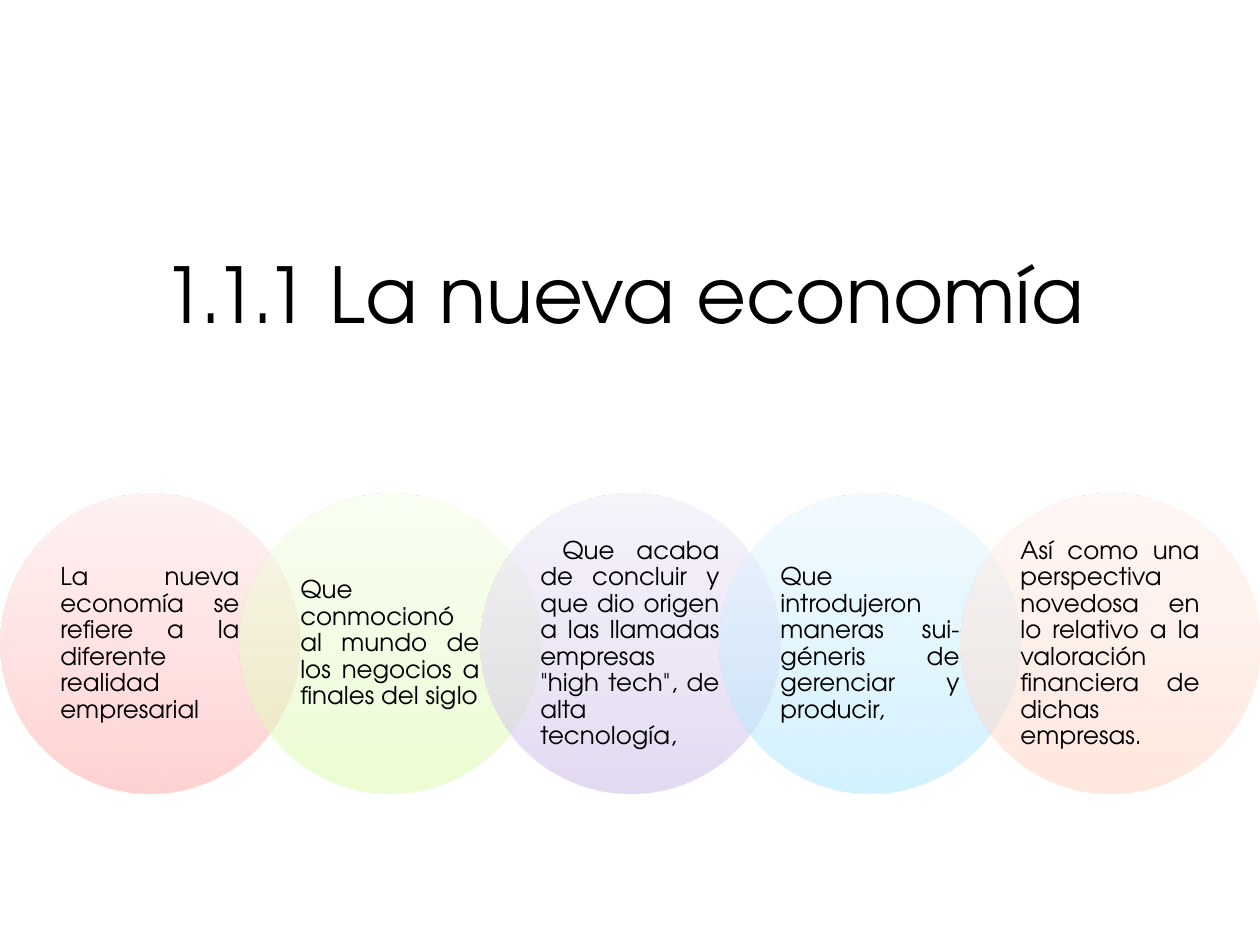
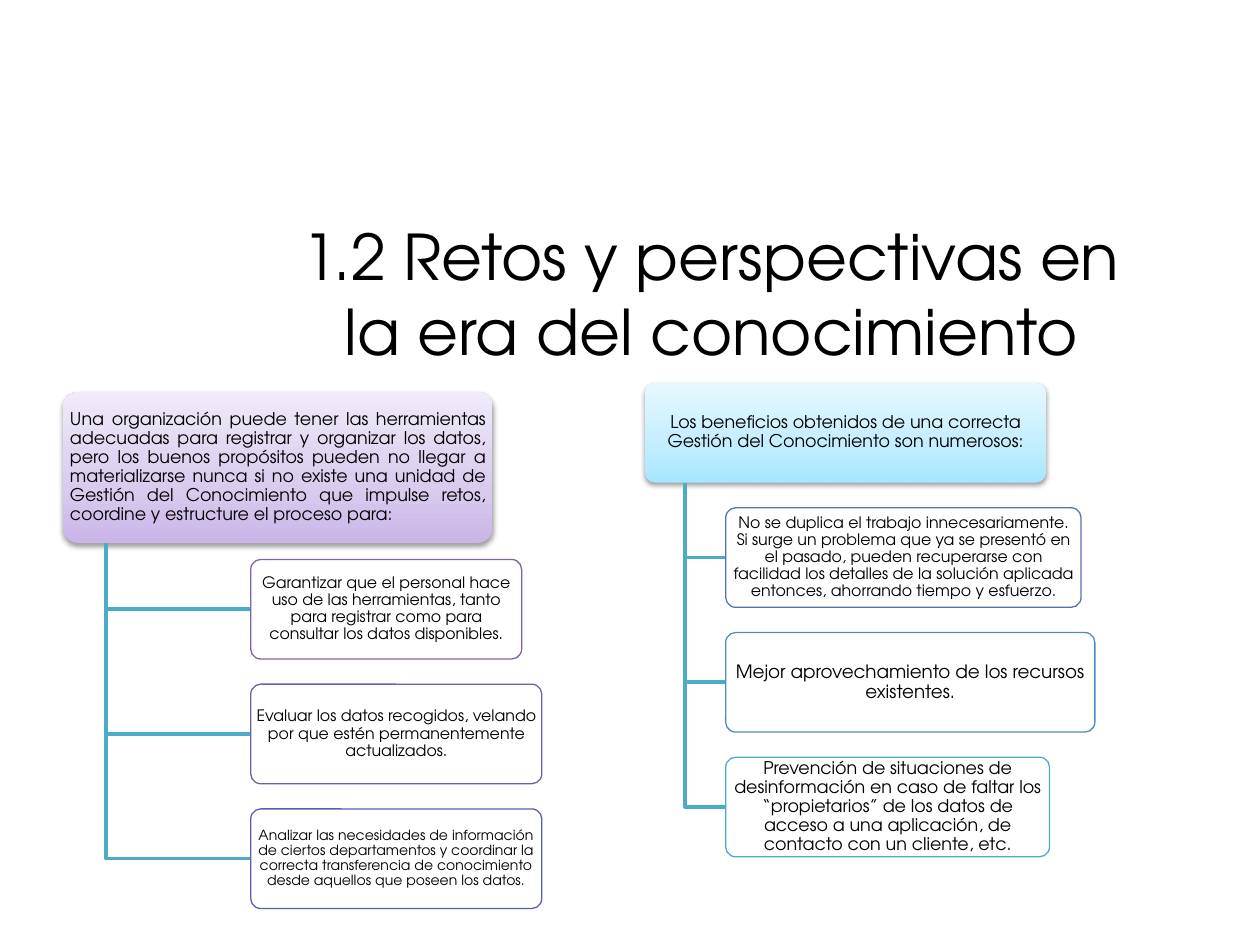
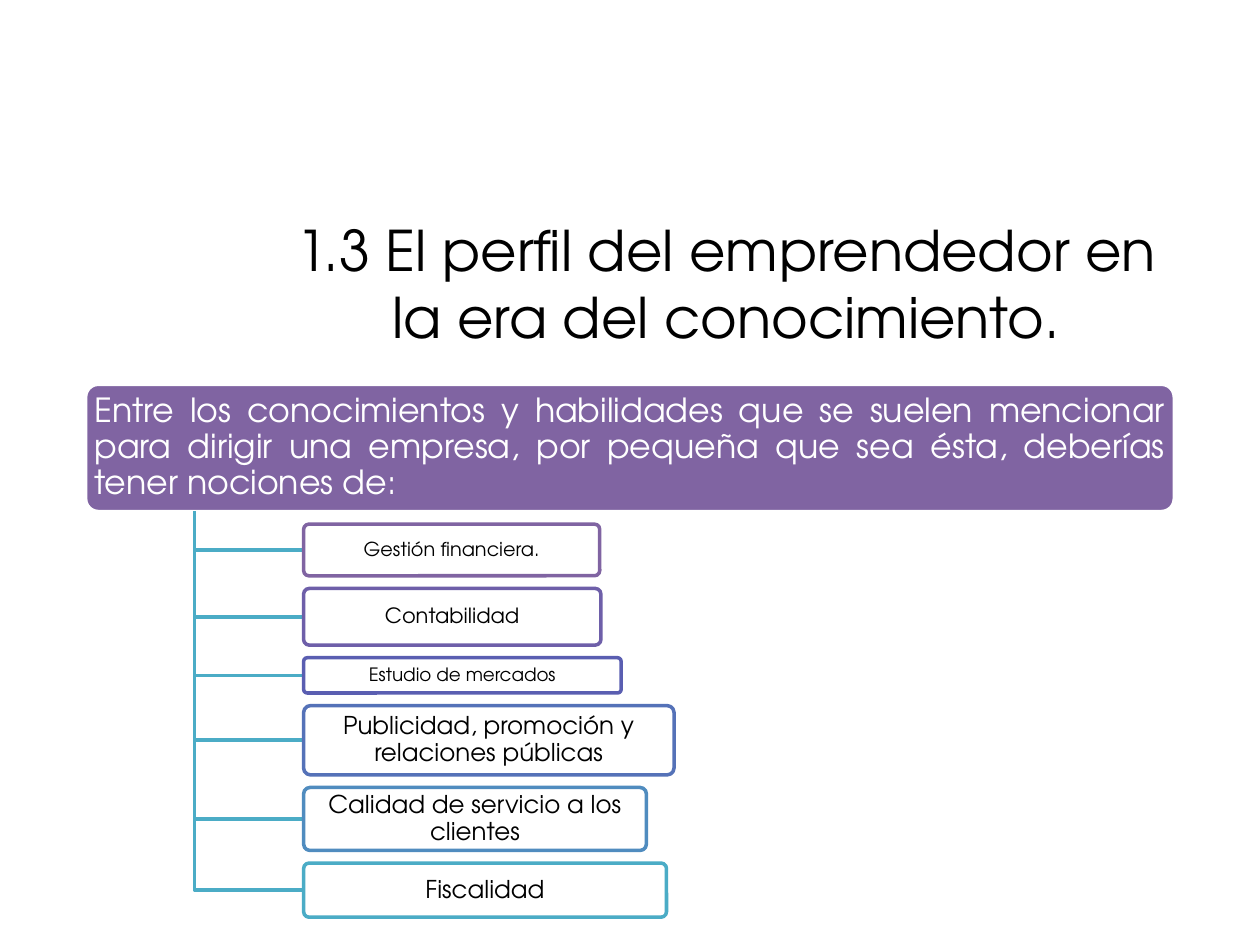
from dataclasses import dataclass

from lxml import etree
from pptx import Presentation
from pptx.dml.color import RGBColor
from pptx.enum.shapes import MSO_SHAPE
from pptx.enum.text import MSO_ANCHOR, MSO_AUTO_SIZE, PP_ALIGN
from pptx.oxml.ns import qn
from pptx.util import Inches, Pt

CENTER, JUSTIFY = PP_ALIGN.CENTER, PP_ALIGN.JUSTIFY
MIDDLE, NO_FIT = MSO_ANCHOR.MIDDLE, MSO_AUTO_SIZE.NONE
OVAL, ROUNDED = MSO_SHAPE.OVAL, MSO_SHAPE.ROUNDED_RECTANGLE


@dataclass(frozen=True)
class Theme:
    font: str = "TeX Gyre Adventor"
    ink: str = "000000"
    paper: str = "FFFFFF"
    branch: str = "4BACC6"
    red: tuple = ("FFA6A5", "FFC0BF", "FFE7E7")
    green: tuple = ("DAFDA7", "E4FCC2", "F5FFE7")
    violet: tuple = ("C9B5E8", "D8CBEE", "F0EAF9")
    blue: tuple = ("A7E6FF", "C1EDFF", "E7F8FF")
    orange: tuple = ("FFD2BD", "FFDED0", "FFF2ED")
    ramp: tuple = ("8064A2", "6E5FA9", "5A5EB1", "5572B8", "508CBF", "4BACC6")
    stops: tuple = (0, 35, 100)
    circle_size: float = 14
    branch_weight: float = 2


THEME = Theme()
WIDTH, HEIGHT = 10, 7.5
TITLE_HEIGHT = 1.25
DIAMETER, CIRCLE_TOP = 2.38, 3.92

ECONOMY = {
    "title": ("1.1.1 La nueva economía", 44, (0.45, 1.7, 9)),
    "circles": [
        ("La nueva economía se refiere a la diferente realidad empresarial", THEME.red),
        ("Que conmocionó al mundo de los negocios a finales del siglo", THEME.green),
        (" Que acaba de concluir y que dio origen a las llamadas empresas "
         "\"high tech\", de alta tecnología,", THEME.violet),
        ("Que introdujeron maneras sui-géneris de gerenciar y producir,", THEME.blue),
        ("Así como una perspectiva novedosa en lo relativo a la valoración "
         "financiera de dichas empresas.", THEME.orange),
    ],
}

CHALLENGES = {
    "title": ("1.2 Retos y perspectivas en la era del conocimiento", 36, (2.09, 1.7, 7.11)),
    "trees": [
        {
            "root": "Una organización puede tener las herramientas adecuadas para registrar "
                    "y organizar los datos, pero los buenos propósitos pueden no llegar a "
                    "materializarse nunca si no existe una unidad de Gestión del Conocimiento "
                    "que impulse retos, coordine y estructure el proceso para:",
            "place": (0.5, 3.11, 3.41, 1.2), "fill": THEME.violet, "size": 10,
            "align": JUSTIFY, "indent": 1.49, "first_gap": 0.13, "gap": 0.2,
            "weight": 0.75, "colours": THEME.ramp[:3],
            "leaves": [
                ("Garantizar que el personal hace uso de las herramientas, tanto para "
                 "registrar como para consultar los datos disponibles.", 9, 2.15, 0.79),
                ("Evaluar los datos recogidos, velando por que estén permanentemente "
                 "actualizados.", 9, 2.31, 0.79),
                ("Analizar las necesidades de información de ciertos departamentos y "
                 "coordinar la correcta transferencia de conocimiento desde aquellos que "
                 "poseen los datos.", 8, 2.31, 0.79),
            ],
        },
        {
            "root": "Los beneficios obtenidos de una correcta Gestión del Conocimiento "
                    "son numerosos:",
            "place": (5.12, 3.04, 3.18, 0.79), "fill": THEME.blue, "size": 10,
            "align": CENTER, "indent": 0.64, "first_gap": 0.2, "gap": 0.2,
            "weight": 0.75, "colours": THEME.ramp[3:],
            "leaves": [
                ("No se duplica el trabajo innecesariamente. Si surge un problema que ya se "
                 "presentó en el pasado, pueden recuperarse con facilidad los detalles de la "
                 "solución aplicada entonces, ahorrando tiempo y esfuerzo.", 9, 2.82, 0.79),
                ("Mejor aprovechamiento de los recursos existentes.", 10.5, 2.93, 0.79),
                ("Prevención de situaciones de desinformación en caso de faltar los "
                 "“propietarios” de los datos de acceso a una aplicación, de contacto con un "
                 "cliente, etc.", 10, 2.57, 0.79),
            ],
        },
    ],
}

PROFILE = {
    "title": ("1.3 El perfil del emprendedor en la era del conocimiento.", 32, (2.17, 1.62, 7.19)),
    "trees": [
        {
            "root": "Entre los conocimientos y habilidades que se suelen mencionar para dirigir "
                    "una empresa, por pequeña que sea ésta, deberías tener nociones de:",
            "place": (0.68, 3.05, 8.64, 1.01), "fill": THEME.ramp[0], "size": 19,
            "align": JUSTIFY, "indent": 1.73, "first_gap": 0.1, "gap": 0.1,
            "weight": 2, "colours": THEME.ramp,
            "leaves": [
                ("Gestión financiera.", 11, 2.35, 0.41),
                ("Contabilidad", 12, 2.36, 0.45),
                ("Estudio de mercados", 10.5, 2.52, 0.28),
                ("Publicidad, promoción y relaciones públicas", 14, 2.94, 0.55),
                ("Calidad de servicio a los clientes", 14, 2.72, 0.5),
                ("Fiscalidad", 14, 2.88, 0.43),
            ],
        },
    ],
}


def rgb(colour):
    return RGBColor.from_string(colour)


def add_node(parent, tag, **attributes):
    return etree.SubElement(parent, qn(tag), {k: str(v) for k, v in attributes.items()})


def write(shape, text, size, align=CENTER, colour=THEME.ink, inset=None, spacing=None):
    frame = shape.text_frame
    frame.word_wrap = True
    frame.auto_size = NO_FIT
    frame.vertical_anchor = MIDDLE
    if inset:
        frame.margin_left = frame.margin_right = Inches(inset[0])
        frame.margin_top = frame.margin_bottom = Inches(inset[1])
    paragraph = frame.paragraphs[0]
    paragraph.alignment = align
    paragraph.line_spacing = spacing
    run = paragraph.add_run()
    run.text = text
    run.font.name = THEME.font
    run.font.size = Pt(size)
    run.font.color.rgb = rgb(colour)


def paint(shape, fill, opacity=100):
    properties = shape.element.spPr
    if isinstance(fill, str):
        shape.fill.solid()
        shape.fill.fore_color.rgb = rgb(fill)
        colours = [properties.find(qn("a:solidFill")).find(qn("a:srgbClr"))]
    else:
        shape.fill.gradient()
        shape.fill.gradient_angle = 90
        stops = properties.find(qn("a:gradFill")).find(qn("a:gsLst"))
        for stop in list(stops):
            stops.remove(stop)
        colours = [
            add_node(add_node(stops, "a:gs", pos=share * 1000), "a:srgbClr", val=colour)
            for share, colour in zip(THEME.stops, fill)
        ]
    if opacity < 100:
        for colour in colours:
            add_node(colour, "a:alpha", val=opacity * 1000)


def outline(shape, colour, weight):
    shape.line.color.rgb = rgb(colour)
    shape.line.width = Pt(weight)


def cast_shadow(shape):
    effects = shape.element.spPr.find(qn("a:effectLst"))
    shadow = add_node(effects, "a:outerShdw", blurRad=Pt(3.1), dist=Pt(1.6),
                      dir=90 * 60000, rotWithShape=0)
    add_node(add_node(shadow, "a:srgbClr", val=THEME.ink), "a:alpha", val=38000)


def add_panel(slide, kind, place, fill, opacity=100, border=None):
    panel = slide.shapes.add_shape(kind, *map(Inches, place))
    panel.shadow.inherit = False
    if kind == ROUNDED:
        panel.adjustments[0] = 0.1
    paint(panel, fill, opacity)
    if border:
        outline(panel, *border)
    else:
        panel.line.fill.background()
    return panel


def add_branch(slide, spine, top, end, level):
    builder = slide.shapes.build_freeform(Inches(spine), Inches(top))
    corners = [(spine, level), (end, level)]
    builder.add_line_segments([(Inches(x), Inches(y)) for x, y in corners], close=False)
    branch = builder.convert_to_shape()
    branch.shadow.inherit = False
    branch.fill.background()
    outline(branch, THEME.branch, THEME.branch_weight)


def add_tree(slide, tree):
    left, top, width, height = tree["place"]
    solid = isinstance(tree["fill"], str)
    border = (THEME.paper, THEME.branch_weight) if solid else None
    root = add_panel(slide, ROUNDED, tree["place"], tree["fill"], border=border)
    if not solid:
        cast_shadow(root)
    write(root, tree["root"], tree["size"], tree["align"],
          THEME.paper if solid else THEME.ink,
          (0.04, 0.03) if solid else (0.02, 0.01), 0.9)
    bottom = top + height
    leaf_left = left + tree["indent"]
    leaf_top = bottom + tree["first_gap"]
    for (text, size, leaf_width, leaf_height), colour in zip(tree["leaves"], tree["colours"]):
        add_branch(slide, left + width * 0.1, bottom, leaf_left, leaf_top + leaf_height / 2)
        leaf = add_panel(slide, ROUNDED, (leaf_left, leaf_top, leaf_width, leaf_height),
                         THEME.paper, 90, (colour, tree["weight"]))
        write(leaf, text, size, inset=(0.02, 0.01), spacing=0.9)
        leaf_top += leaf_height + tree["gap"]


def add_circles(slide, circles):
    step = (WIDTH - DIAMETER) / (len(circles) - 1)
    for column, (text, fill) in enumerate(circles):
        place = (column * step, CIRCLE_TOP, DIAMETER, DIAMETER)
        circle = add_panel(slide, OVAL, place, fill, 50)
        write(circle, text, THEME.circle_size, JUSTIFY, inset=(0.13, 0.02), spacing=0.9)


def add_titled_slide(deck, text, size, place):
    slide = deck.slides.add_slide(deck.slide_layouts[5])
    title = slide.shapes.title
    title.left, title.top, title.width = map(Inches, place)
    title.height = Inches(TITLE_HEIGHT)
    write(title, text, size)
    return slide


def main():
    deck = Presentation()
    deck.slide_width, deck.slide_height = Inches(WIDTH), Inches(HEIGHT)
    for content in (ECONOMY, CHALLENGES, PROFILE):
        slide = add_titled_slide(deck, *content["title"])
        add_circles(slide, content["circles"]) if "circles" in content else None
        for tree in content.get("trees", []):
            add_tree(slide, tree)
    deck.save("out.pptx")


if __name__ == "__main__":
    main()
